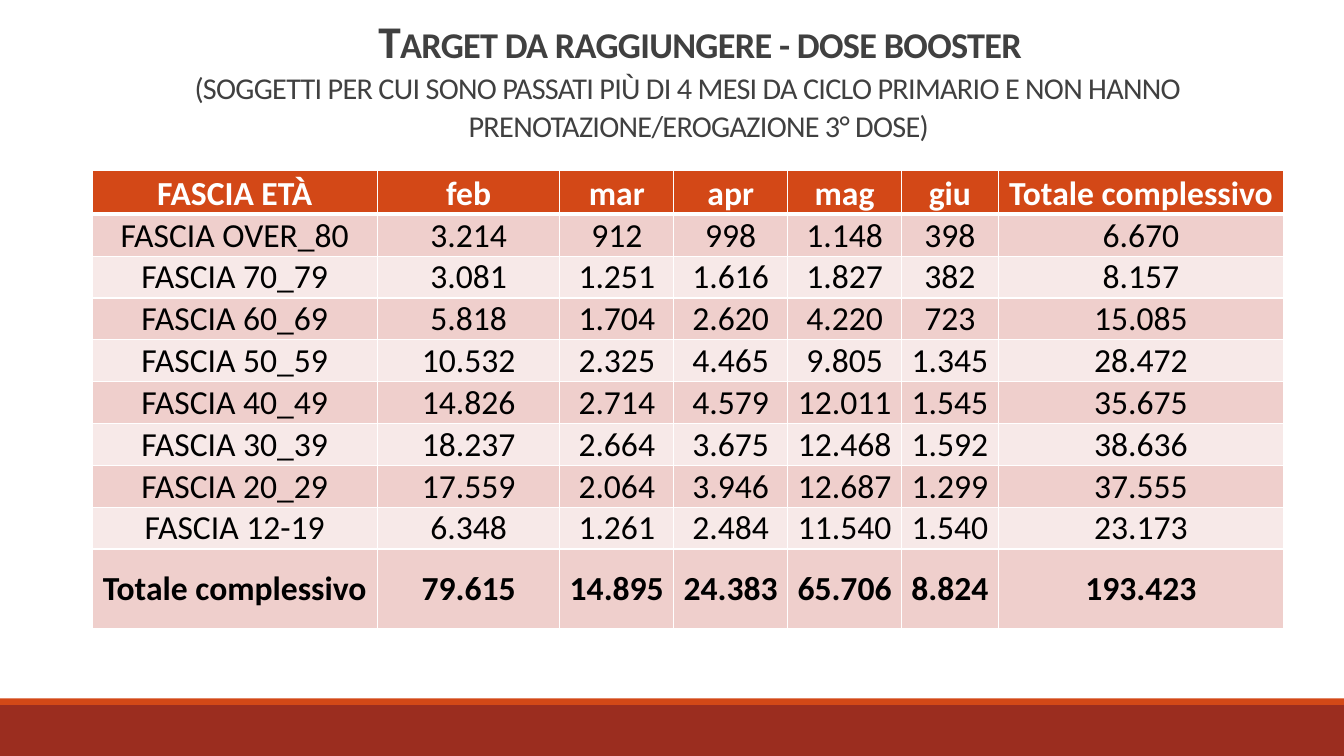
"""Build the booster dose target slide: title, age group table and footer bars."""
from copy import deepcopy

from lxml import etree
from pptx import Presentation
from pptx.dml.color import RGBColor
from pptx.enum import shapes, text
from pptx.oxml import ns
from pptx.util import Cm, Pt

FONT = "Calibri"
COLORS = {
    "orange": "D34817",
    "brick": "9B2D1F",
    "title": "404040",
    "band_dark": "EFCFCC",
    "band_light": "F7E9E8",
    "white": "FFFFFF",
    "black": "000000",
}
COLUMNS = [7.19, 4.6, 2.87, 2.87, 2.87, 2.44, 7.19]
ROWS = [1.1] + [1.02] * 8 + [2.01]
DATA = [
    ["FASCIA ETÀ", "feb", "mar", "apr", "mag", "giu", "Totale complessivo"],
    ["FASCIA OVER_80", "3.214", "912", "998", "1.148", "398", "6.670"],
    ["FASCIA 70_79", "3.081", "1.251", "1.616", "1.827", "382", "8.157"],
    ["FASCIA 60_69", "5.818", "1.704", "2.620", "4.220", "723", "15.085"],
    ["FASCIA 50_59", "10.532", "2.325", "4.465", "9.805", "1.345", "28.472"],
    ["FASCIA 40_49", "14.826", "2.714", "4.579", "12.011", "1.545", "35.675"],
    ["FASCIA 30_39", "18.237", "2.664", "3.675", "12.468", "1.592", "38.636"],
    ["FASCIA 20_29", "17.559", "2.064", "3.946", "12.687", "1.299", "37.555"],
    ["FASCIA 12-19", "6.348", "1.261", "2.484", "11.540", "1.540", "23.173"],
    ["Totale complessivo", "79.615", "14.895", "24.383", "65.706", "8.824", "193.423"],
]


def rgb(name):
    """Return the named colour."""
    return RGBColor.from_string(COLORS[name])


def add_footer(s, left, top, width, height):
    """Stack a thin orange bar on a brick bar inside the box."""
    thin = Cm(0.17)
    bars = [("orange", top, thin), ("brick", top + thin, height - thin)]
    for color, y, h in bars:
        sp = s.shapes.add_shape(shapes.MSO_SHAPE.RECTANGLE, left, y, width, h)
        sp.shadow.inherit = False
        sp.fill.solid()
        sp.fill.fore_color.rgb = rgb(color)
        sp.line.fill.background()


def add_title(s, left, top, width, height):
    """Fill the title placeholder with a bold heading and a lighter subtitle."""
    sp = s.shapes.title
    sp.left, sp.top, sp.width, sp.height = left, top, width, height
    tf = sp.text_frame
    tf.word_wrap = True
    tf.auto_size = text.MSO_AUTO_SIZE.NONE
    tf.vertical_anchor = text.MSO_ANCHOR.BOTTOM
    p = tf.paragraphs[0]
    p.alignment = text.PP_ALIGN.CENTER
    p.line_spacing = 0.85
    heading = p.add_run()
    heading.text = "Target da raggiungere - dose booster"
    p.add_line_break()
    subtitle = p.add_run()
    subtitle.text = ("(soggetti per cui sono passati più di 4 mesi da ciclo primario "
                     "e non hanno prenotazione/erogazione 3° dose)")
    for r, size, bold in [(heading, 32.4, True), (subtitle, 27, False)]:
        r.font.name = FONT
        r.font.size = Pt(size)
        r.font.bold = bold
        r.font.color.rgb = rgb("title")
        props = r._r.get_or_add_rPr()
        props.set("cap", "small")
        props.set("spc", "-50")
    line_break = p._p.find(ns.qn("a:br"))
    line_break.append(deepcopy(heading._r.get_or_add_rPr()))


def set_borders(cell, bottom):
    """Draw white cell borders, with the bottom one in the given points."""
    props = cell._tc.get_or_add_tcPr()
    for side, width in [("L", 1), ("R", 1), ("T", 1), ("B", bottom)]:
        ln = etree.SubElement(props, ns.qn(f"a:ln{side}"), w=str(Pt(width)))
        fill = etree.SubElement(ln, ns.qn("a:solidFill"))
        etree.SubElement(fill, ns.qn("a:srgbClr"), val=COLORS["white"])


def format_cell(cell, row, col):
    """Style one cell according to its row and column."""
    header, total = row == 0, row == len(DATA) - 1
    set_borders(cell, 3 if header else 1)
    cell.margin_left = cell.margin_right = cell.margin_top = Cm(0.02)
    cell.margin_bottom = 0
    at_bottom = header or (col == 0 and not total)
    cell.vertical_anchor = text.MSO_ANCHOR.BOTTOM if at_bottom else text.MSO_ANCHOR.MIDDLE
    band = "band_dark" if row % 2 else "band_light"
    cell.fill.solid()
    cell.fill.fore_color.rgb = rgb("orange" if header else band)
    p = cell.text_frame.paragraphs[0]
    p.alignment = text.PP_ALIGN.CENTER
    p.font.name = FONT
    p.font.size = Pt(24)
    p.font.bold = header or total
    p.font.color.rgb = rgb("white" if header else "black")


def add_targets(s, left, top, width, height):
    """Place the table of targets by age group and month."""
    table = s.shapes.add_table(len(ROWS), len(COLUMNS), left, top, width, height).table
    for column, w in zip(table.columns, COLUMNS):
        column.width = Cm(w)
    for row, h in zip(table.rows, ROWS):
        row.height = Cm(h)
    for i, values in enumerate(DATA):
        for j, value in enumerate(values):
            cell = table.cell(i, j)
            cell.text = value
            format_cell(cell, i, j)


def main():
    """Create the presentation and save it."""
    prs = Presentation()
    prs.slide_width, prs.slide_height = Cm(33.87), Cm(19.05)
    s = prs.slides.add_slide(prs.slide_layouts[5])
    add_footer(s, 0, Cm(17.6), prs.slide_width, Cm(1.45))
    add_title(s, Cm(3.35), Cm(0.36), Cm(27.94), Cm(3.43))
    add_targets(s, Cm(2.32), Cm(4.3), Cm(sum(COLUMNS)), Cm(sum(ROWS)))
    prs.save("out.pptx")


if __name__ == "__main__":
    main()
